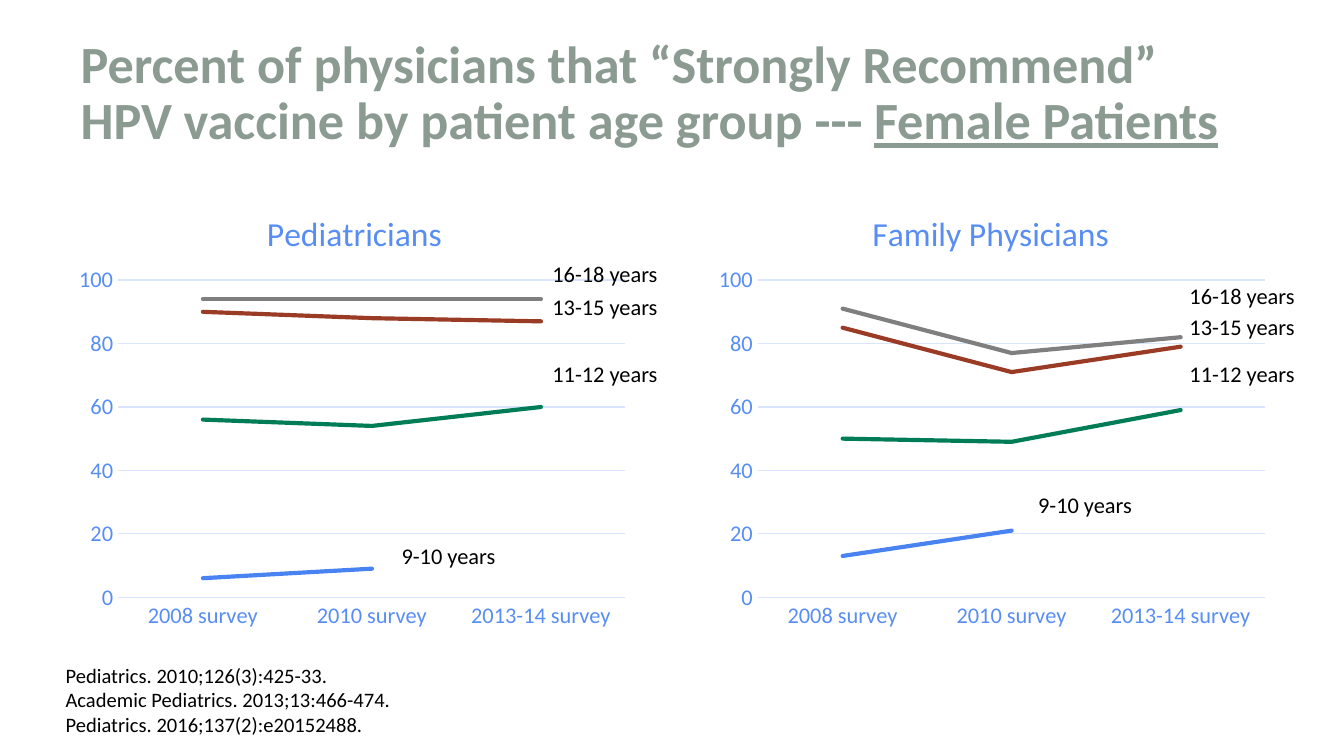
from lxml import etree
from pptx import Presentation
from pptx.chart.data import CategoryChartData
from pptx.dml.color import RGBColor
from pptx.enum import chart as ch, text
from pptx.oxml import ns
from pptx.util import Cm, Pt

FONT = "Calibri"
COLORS = {"title": "8B9B92", "axis": "588EF4", "grid": "D8E5FC", "label": "000000"}
SERIES_COLORS = ["4983F2", "007D57", "9A3B26", "7F7F7F"]
AGES = ["9-10 years", "11-12 years", "13-15 years", "16-18 years"]
SURVEYS = ["2008 survey", "2010 survey", "2013-14 survey"]

# label_spots follow the order of AGES, in cm
PANELS = [
    {"name": "Pediatricians", "left": 1.27, "title_x": 0.34,
     "values": [(6, 9, None), (56, 54, 60), (90, 88, 87), (94, 94, 94)],
     "label_spots": [(7.34, 10.12), (10.19, 6.69), (10.19, 5.41), (10.19, 4.8)]},
    {"name": "Family Physicians", "left": 13.36, "title_x": 0.28,
     "values": [(13, 21, None), (50, 49, 59), (85, 71, 79), (91, 77, 82)],
     "label_spots": [(19.37, 9.16), (22.23, 6.69), (22.23, 5.79), (22.23, 5.2)]},
]
CITATIONS = [
    "Pediatrics. 2010;126(3):425-33.",
    "Academic Pediatrics. 2013;13:466-474.",
    "Pediatrics. 2016;137(2):e20152488.",
]


def place_in_chart(element, index, **settings):
    """Give a chart part a manual layout, in fractions of the chart."""
    for old in element.findall(ns.qn("c:layout")):
        element.remove(old)
    layout = etree.Element(ns.qn("c:layout"))
    manual = etree.SubElement(layout, ns.qn("c:manualLayout"))
    for tag, value in settings.items():
        etree.SubElement(manual, ns.qn(f"c:{tag}")).set("val", str(value))
    element.insert(index, layout)


def add_lines(left, top, width, height, lines, size):
    frame = slide.shapes.add_textbox(Cm(left), Cm(top), Cm(width), Cm(height)).text_frame
    frame.word_wrap = False
    for number, line in enumerate(lines):
        paragraph = frame.add_paragraph() if number else frame.paragraphs[0]
        run = paragraph.add_run()
        run.text = line
        run.font.name, run.font.size = FONT, Pt(size)
        run.font.color.rgb = RGBColor.from_string(COLORS["label"])


prs = Presentation()
prs.slide_width, prs.slide_height = Cm(25.4), Cm(14.29)
slide = prs.slides.add_slide(prs.slide_layouts[5])

# Title
title = slide.shapes.title
title.left, title.top, title.width, title.height = Cm(1.27), Cm(0.58), Cm(22.86), Cm(2.39)
title.text_frame.vertical_anchor = text.MSO_ANCHOR.BOTTOM
title.text_frame.auto_size = text.MSO_AUTO_SIZE.NONE
heading = title.text_frame.paragraphs[0]
heading.alignment = text.PP_ALIGN.LEFT
heading.line_spacing = Pt(30)
for number, (words, underlined) in enumerate([
    ("Percent of physicians that “Strongly Recommend”", False),
    ("HPV vaccine by patient age group --- ", False),
    ("Female Patients", True),
]):
    if number == 1:
        heading.add_line_break()
    run = heading.add_run()
    run.text = words
    run.font.name, run.font.size, run.font.bold = FONT, Pt(28), True
    run.font.underline = underlined
    run.font.color.rgb = RGBColor.from_string(COLORS["title"])

# Charts
for panel in PANELS:
    data = CategoryChartData()
    data.categories = SURVEYS
    for age, values in zip(AGES, panel["values"]):
        data.add_series(age, values)
    chart = slide.shapes.add_chart(
        ch.XL_CHART_TYPE.LINE, Cm(panel["left"]), Cm(3.33), Cm(10.77), Cm(8.74), data).chart
    chart.has_legend = False
    chart.font.name, chart.font.size = FONT, Pt(12)
    chart.font.color.rgb = RGBColor.from_string(COLORS["axis"])
    place_in_chart(chart.plots[0]._element.getparent(), 0, layoutTarget="inner",
                   xMode="edge", yMode="edge", x=0.09, y=0.225, w=0.89, h=0.686)

    chart.has_title = True
    run = chart.chart_title.text_frame.paragraphs[0].add_run()
    run.text = panel["name"]
    run.font.name, run.font.size, run.font.bold = FONT, Pt(18), False
    run.font.color.rgb = RGBColor.from_string(COLORS["axis"])
    place_in_chart(chart.chart_title._element, 1,
                   xMode="edge", yMode="edge", x=panel["title_x"], y=0.06)

    percent, survey = chart.value_axis, chart.category_axis
    percent.minimum_scale, percent.maximum_scale, percent.major_unit = 0, 100, 20
    for axis in (percent, survey):
        axis.major_tick_mark = axis.minor_tick_mark = ch.XL_TICK_MARK.NONE
        axis.tick_labels.font.name, axis.tick_labels.font.size = FONT, Pt(12)
        axis.tick_labels.font.color.rgb = RGBColor.from_string(COLORS["axis"])
    percent.format.line.fill.background()
    for line in (percent.major_gridlines.format.line, survey.format.line):
        line.color.rgb = RGBColor.from_string(COLORS["grid"])
        line.width = Pt(0.75)

    chart.plots[0].vary_by_categories = False
    for series, color in zip(chart.plots[0].series, SERIES_COLORS):
        series.smooth = False
        series.marker.style = ch.XL_MARKER_STYLE.NONE
        series.format.line.color.rgb = RGBColor.from_string(color)
        series.format.line.width = Pt(2.25)
        series.format.line._get_or_add_ln().set("cap", "rnd")

# Age labels, above both charts
for panel in PANELS:
    for age, (left, top) in zip(AGES, panel["label_spots"]):
        add_lines(left, top, 2.31 if age == AGES[0] else 2.51, 0.76, [age], 12)

add_lines(0.99, 12.4, 6.98, 1.68, CITATIONS, 11)

prs.save("out.pptx")
